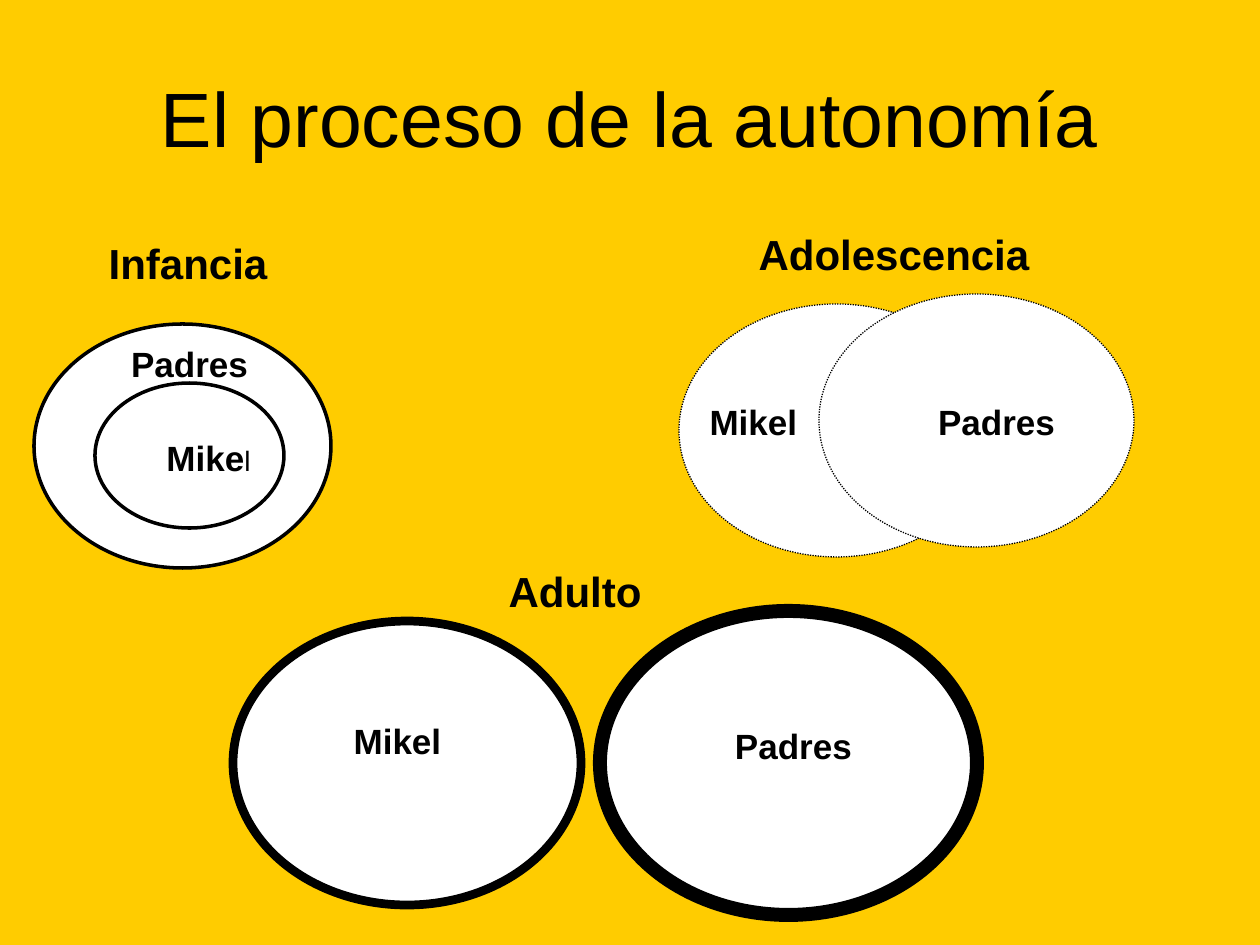
from pptx import Presentation
from pptx.dml.color import RGBColor
from pptx.enum import dml, shapes, text
from pptx.util import Pt

EMU_PER_PX = 9144000 / 1260
FONT = "Arial"
COLORS = {"background": "FFCC00", "circle": "FFFFFF", "ink": "000000"}

# Each stage: origin, heading box, circles (box, line width), labels (words, box).
# Boxes are left, top, width, height, relative to the stage's origin.
STAGES = [
    {"heading": "Infancia", "origin": (34, 204), "heading_box": (20, 0, 268, 118),
     "circles": [((0, 120, 297, 244), 2), ((61, 179, 189, 145), 2)],
     "labels": [("Padres", (71, 130, 169, 58)), ("Mikel", (100, 219, 149, 68))],
     "small_last_letter": "Mikel"},
    {"heading": "Adolescencia", "origin": (679, 195), "heading_box": (51, 0, 328, 118),
     "circles": [((0, 109, 315, 253), 0.75), ((140, 99, 315, 253), 0.75)],
     "labels": [("Mikel", (10, 198, 129, 58)), ("Padres", (238, 198, 159, 58))],
     "dotted": True},
    {"heading": "Adulto", "origin": (233, 542), "heading_box": (208, 0, 268, 98),
     "circles": [((0, 79, 348, 284), 5), ((367, 69, 377, 304), 8)],
     "labels": [("Mikel", (100, 169, 129, 58)), ("Padres", (486, 169, 149, 69))]},
]


def px(length):
    return round(length * EMU_PER_PX)


def color(name):
    return RGBColor.from_string(COLORS[name])


def place(box, origin):
    left, top, width, height = box
    return [px(n) for n in (origin[0] + left, origin[1] + top, width, height)]


def format_run(run, size, bold):
    run.font.name = FONT
    run.font.size = Pt(size)
    run.font.bold = bold
    run.font.color.rgb = color("ink")


def center_text(frame, words, size, bold):
    frame.text = words
    frame.word_wrap = True
    frame.vertical_anchor = text.MSO_ANCHOR.MIDDLE
    paragraph = frame.paragraphs[0]
    paragraph.alignment = text.PP_ALIGN.CENTER
    format_run(paragraph.runs[0], size, bold)
    return paragraph


def add_title(slide, words, box):
    title = slide.shapes.title
    title.left, title.top, title.width, title.height = place(box, (0, 0))
    center_text(title.text_frame, words, 44, False)


def add_circle(slide, position, line_width, dotted):
    circle = slide.shapes.add_shape(shapes.MSO_SHAPE.OVAL, *position)
    circle.shadow.inherit = False
    circle.fill.solid()
    circle.fill.fore_color.rgb = color("circle")
    circle.line.color.rgb = color("ink")
    circle.line.width = Pt(line_width)
    if dotted:
        circle.line.dash_style = dml.MSO_LINE.ROUND_DOT


def add_label(slide, words, position, size):
    label = slide.shapes.add_textbox(*position)
    return center_text(label.text_frame, words, size, True)


def add_stage(slide, stage):
    origin = stage["origin"]
    for box, line_width in stage["circles"]:
        add_circle(slide, place(box, origin), line_width, stage.get("dotted", False))
    add_label(slide, stage["heading"], place(stage["heading_box"], origin), 24)
    for words, box in stage["labels"]:
        paragraph = add_label(slide, words, place(box, origin), 20)
        if words == stage.get("small_last_letter"):
            paragraph.runs[0].text = words[:-1]
            last_letter = paragraph.add_run()
            last_letter.text = words[-1]
            format_run(last_letter, 16, False)


def main():
    presentation = Presentation()
    presentation.slide_width, presentation.slide_height = px(1260), px(945)
    slide = presentation.slides.add_slide(presentation.slide_layouts[5])

    # Background and title
    slide.background.fill.solid()
    slide.background.fill.fore_color.rgb = color("background")
    add_title(slide, "El proceso de la autonomía", (63, 38, 1134, 157))

    # Stages of autonomy
    for stage in STAGES:
        add_stage(slide, stage)

    presentation.save("out.pptx")


if __name__ == "__main__":
    main()
